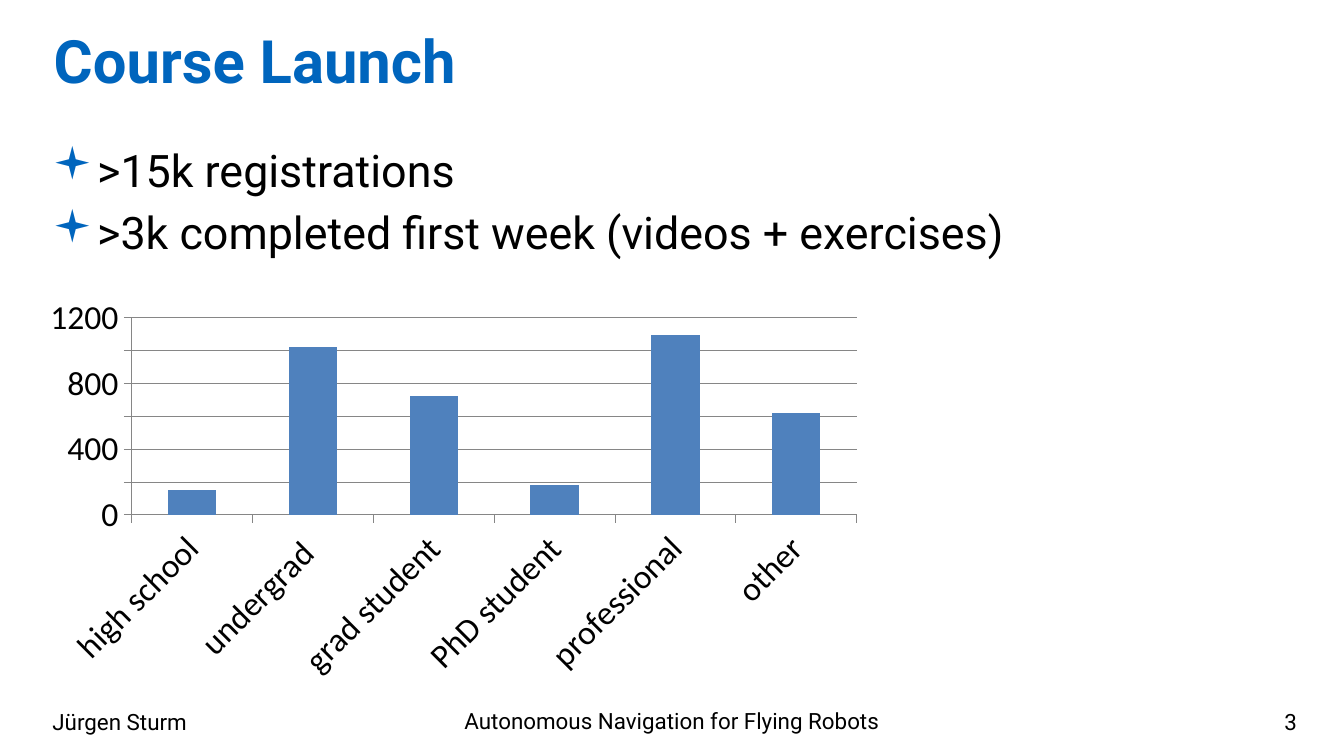
from dataclasses import dataclass

from lxml import etree
from pptx import Presentation
from pptx import util as u
from pptx.chart.data import CategoryChartData
from pptx.dml.color import RGBColor
from pptx.enum import chart as ch, text as tx
from pptx.oxml.ns import qn

BLUE = "0065BD"
BLACK = "000000"
GRAY = "868686"
LEFT, MID, RIGHT = tx.PP_ALIGN.LEFT, tx.PP_ALIGN.CENTER, tx.PP_ALIGN.RIGHT


@dataclass
class Foot:
    words: str
    left: float
    top: float
    width: float
    align: tx.PP_ALIGN


FEET = [
    Foot("Jürgen Sturm", 0.39, 5.24, 2.33, LEFT),
    Foot("Autonomous Navigation for Flying Robots", 2.25, 5.23, 5.5, MID),
    Foot("3", 7.17, 5.24, 2.48, RIGHT),
]
POINTS = [">15k registrations", ">3k completed first week (videos + exercises)"]
COUNTS = {
    "high school": 150,
    "undergrad ": 1020,
    "grad student": 720,
    "PhD student": 180,
    "professional": 1090,
    "other": 620,
}


def tint(code: str) -> RGBColor:
    return RGBColor.from_string(code)


def add_mark(para, first: bool) -> None:
    props = para._p.get_or_add_pPr()
    indent = u.Inches(0.3)
    props.set("marL", str(indent))
    props.set("indent", str(-indent))
    if not first:
        space = etree.SubElement(props, qn("a:spcBef"))
        etree.SubElement(space, qn("a:spcPct")).set("val", "20000")
    color = etree.SubElement(props, qn("a:buClr"))
    etree.SubElement(color, qn("a:srgbClr")).set("val", BLUE)
    etree.SubElement(props, qn("a:buFont")).set("typeface", "Wingdings")
    etree.SubElement(props, qn("a:buChar")).set("char", "▪")


def add_text(slide, lines: list[str], left: float, top: float, width: float,
             height: float, *, size: int, color: str = BLACK, bold: bool = False,
             align=LEFT, anchor=tx.MSO_ANCHOR.TOP, marks: bool = False) -> None:
    box = slide.shapes.add_textbox(*map(u.Inches, (left, top, width, height)))
    frame = box.text_frame
    frame.word_wrap = True
    frame.vertical_anchor = anchor
    frame.margin_left = frame.margin_right = 0
    frame.margin_top = frame.margin_bottom = 0
    for i, line in enumerate(lines):
        para = frame.add_paragraph() if i else frame.paragraphs[0]
        para.alignment = align
        if marks:
            add_mark(para, i == 0)
        run = para.add_run()
        run.text = line
        font = run.font
        font.name, font.size, font.bold = "Roboto", u.Pt(size), bold
        font.color.rgb = tint(color)


def add_bars(slide, counts: dict[str, int]) -> None:
    data = CategoryChartData()
    data.categories = list(counts)
    data.add_series("Series 1", list(counts.values()))
    place = map(u.Inches, (0.25, 2.15, 6.25, 2.97))
    chart = slide.shapes.add_chart(
        ch.XL_CHART_TYPE.COLUMN_CLUSTERED, *place, data).chart
    chart.has_legend = False
    chart.has_title = False
    chart.font.name, chart.font.size = "Calibri", u.Pt(18)
    chart.font.color.rgb = tint(BLACK)

    plot = chart.plots[0]
    plot.gap_width = 150
    plot.vary_by_categories = False
    fill = plot.series[0].format.fill
    fill.solid()
    fill.fore_color.rgb = tint("4F81BD")

    names, scale = chart.category_axis, chart.value_axis
    scale.minimum_scale, scale.maximum_scale = 0, 1200
    scale.major_unit = 200
    scale.has_major_gridlines = True
    for part in (names, scale, scale.major_gridlines):
        part.format.line.color.rgb = tint(GRAY)
        part.format.line.width = u.Pt(0.5)
    for axis in (names, scale):
        axis.major_tick_mark = ch.XL_TICK_MARK.OUTSIDE
        font = axis.tick_labels.font
        font.name, font.size = "Calibri", u.Pt(18)
        font.color.rgb = tint(BLACK)
    turn = names._element.find(qn("c:txPr")).find(qn("a:bodyPr"))
    turn.set("rot", str(-45 * 60000))


def main() -> None:
    deck = Presentation()
    deck.slide_width = u.Inches(10)
    deck.slide_height = deck.slide_width * 9 // 16
    slide = deck.slides.add_slide(deck.slide_layouts[6])
    add_text(slide, ["Course Launch"], 0.4, 0.18, 8.36, 0.55,
             size=32, color=BLUE, bold=True)
    add_text(slide, POINTS, 0.39, 1.06, 9.26, 3.96, size=24, marks=True)
    for foot in FEET:
        add_text(slide, [foot.words], foot.left, foot.top, foot.width, 0.26,
                 size=12, align=foot.align, anchor=tx.MSO_ANCHOR.MIDDLE)
    add_bars(slide, COUNTS)
    deck.save("out.pptx")


if __name__ == "__main__":
    main()
